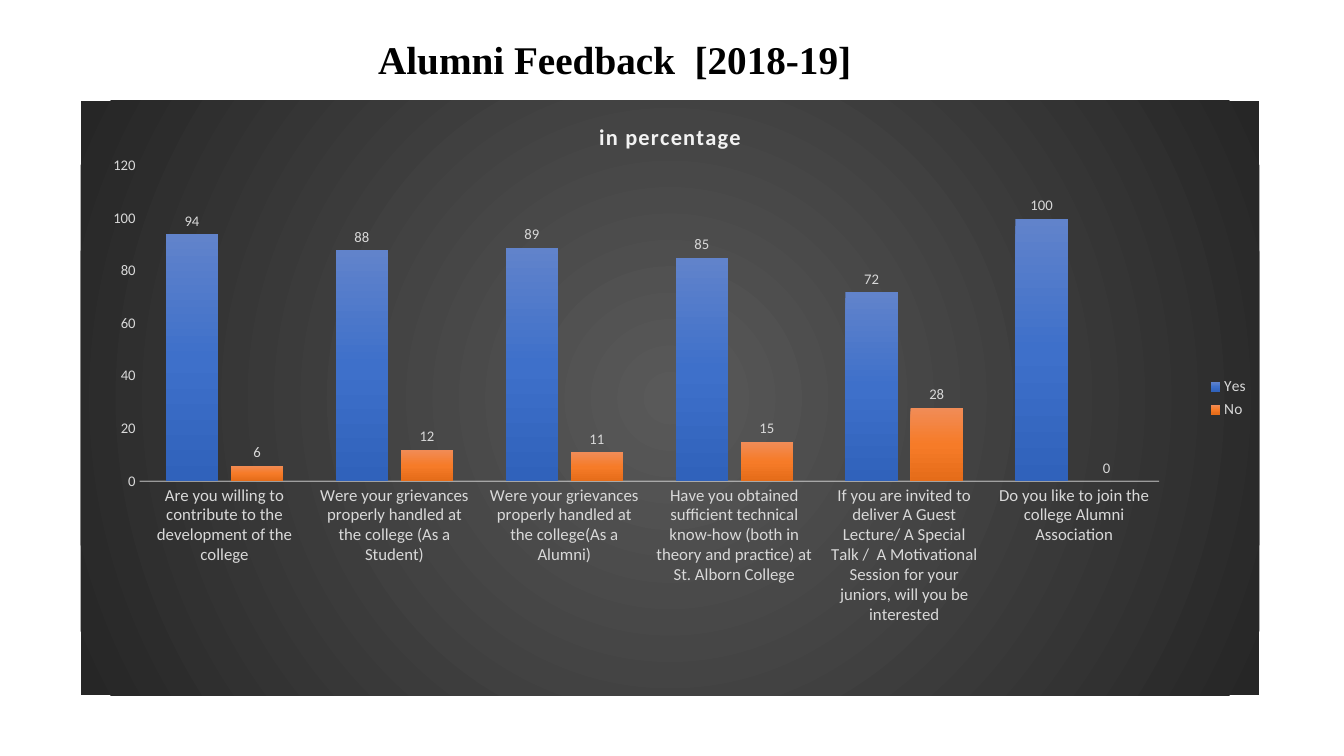
import pptx
import pptx.chart.data
import pptx.dml.color
import pptx.enum.chart
import pptx.enum.text
import pptx.oxml
import pptx.oxml.ns
import pptx.util
from pptx.util import Inches

BLACK = pptx.dml.color.RGBColor(0x00, 0x00, 0x00)
OFF_WHITE = pptx.dml.color.RGBColor(0xF2, 0xF2, 0xF2)
LIGHT_GREY = pptx.dml.color.RGBColor(0xD9, 0xD9, 0xD9)
MID_GREY = pptx.dml.color.RGBColor(0x59, 0x59, 0x59)
DARK_GREY = pptx.dml.color.RGBColor(0x26, 0x26, 0x26)
BLUES = [pptx.dml.color.RGBColor(0x61, 0x83, 0xCB),
         pptx.dml.color.RGBColor(0x3E, 0x70, 0xCA),
         pptx.dml.color.RGBColor(0x30, 0x62, 0xBB)]
ORANGES = [pptx.dml.color.RGBColor(0xF1, 0x8C, 0x57),
           pptx.dml.color.RGBColor(0xF6, 0x7B, 0x28),
           pptx.dml.color.RGBColor(0xE5, 0x6C, 0x19)]

QUESTIONS = [
    "Are you willing to contribute to the development of the college",
    "Were your grievances properly handled at the college (As a Student)",
    "Were your grievances properly handled at the college(As a Alumni)",
    "Have you obtained sufficient technical know-how (both in theory and "
    "practice) at St. Alborn College",
    "If you are invited to deliver A Guest Lecture/ A Special Talk /  "
    "A Motivational Session for your juniors, will you be interested",
    "Do you like to join the college Alumni Association",
]
ANSWERS = {
    "Yes": ([94, 88, 89, 85, 72, 100], BLUES),
    "No": ([6, 12, 11, 15, 28, 0], ORANGES),
}
LINEAR = '<a:lin ang="5400000" scaled="0"/>'
RADIAL = ('<a:path path="circle"><a:fillToRect l="50000" t="50000" '
          'r="50000" b="50000"/></a:path>')


def parse_chart_xml(tag, body):
    ns = pptx.oxml.ns.nsdecls("c", "a")
    return pptx.oxml.parse_xml(f"<c:{tag} {ns}>{body}</c:{tag}>")


def gradient_properties(colors, direction):
    """Return a c:spPr with evenly spaced gradient stops and no outline."""
    step = 100000 // (len(colors) - 1)
    stops = "".join(f'<a:gs pos="{i * step}"><a:srgbClr val="{c}"/></a:gs>'
                    for i, c in enumerate(colors))
    return parse_chart_xml(
        "spPr", f'<a:gradFill rotWithShape="1"><a:gsLst>{stops}</a:gsLst>'
                f"{direction}</a:gradFill><a:ln><a:noFill/></a:ln>")


def style_font(font, size, color, name="Calibri", bold=False):
    font.size = pptx.util.Pt(size)
    font.name = name
    font.bold = bold
    font.color.rgb = color


def add_title(s):
    title = s.shapes.title
    title.left, title.top = Inches(3.65), Inches(0.3)
    title.width, title.height = Inches(5.51), Inches(0.57)
    tf = title.text_frame
    tf.word_wrap = True
    tf.auto_size = pptx.enum.text.MSO_AUTO_SIZE.SHAPE_TO_FIT_TEXT
    tf.vertical_anchor = pptx.enum.text.MSO_ANCHOR.TOP
    p = tf.paragraphs[0]
    p.alignment = pptx.enum.text.PP_ALIGN.LEFT
    r = p.add_run()
    r.text = "Alumni Feedback  [2018-19]"
    style_font(r.font, 28, BLACK, "Times New Roman", True)


def style_chart_title(chart):
    chart.has_title = True
    chart.chart_title.include_in_layout = False
    r = chart.chart_title.text_frame.paragraphs[0].add_run()
    r.text = "in percentage"
    style_font(r.font, 16, OFF_WHITE, bold=True)
    r.font._element.set("spc", "100")


def style_axes(chart):
    for axis, size in ((chart.category_axis, 12), (chart.value_axis, 10.5)):
        axis.has_major_gridlines = False
        axis.major_tick_mark = pptx.enum.chart.XL_TICK_MARK.NONE
        axis.minor_tick_mark = pptx.enum.chart.XL_TICK_MARK.NONE
        style_font(axis.tick_labels.font, size, LIGHT_GREY)
    chart.value_axis.minimum_scale = 0
    chart.value_axis.maximum_scale = 120
    chart.value_axis.major_unit = 20
    chart.value_axis.format.line.fill.background()
    line = chart.category_axis.format.line
    line.width = pptx.util.Pt(1)
    line.color.rgb = OFF_WHITE
    color = line._ln.find(".//" + pptx.oxml.ns.qn("a:srgbClr"))
    color.append(pptx.oxml.parse_xml(
        f'<a:alpha {pptx.oxml.ns.nsdecls("a")} val="54000"/>'))


def style_bars(chart):
    plot = chart.plots[0]
    plot.vary_by_categories = False
    plot.gap_width = 100
    plot.overlap = -24
    for series, (_, colors) in zip(plot.series, ANSWERS.values()):
        ser = series._element
        ser.replace(ser.get_or_add_spPr(), gradient_properties(colors, LINEAR))
        labels = series.data_labels
        labels.show_value = True
        labels.position = pptx.enum.chart.XL_LABEL_POSITION.OUTSIDE_END
        style_font(labels.font, 10.5, LIGHT_GREY)


def place_plot(chart, x, y, w, h):
    """Fix the inner plot area, in fractions of the chart's size."""
    area = chart._chartSpace.chart.plotArea
    for layout in area.findall(pptx.oxml.ns.qn("c:layout")):
        area.remove(layout)
    settings = [("layoutTarget", "inner"), ("xMode", "edge"),
                ("yMode", "edge"), ("x", x), ("y", y), ("w", w), ("h", h)]
    body = "".join(f'<c:{tag} val="{val}"/>' for tag, val in settings)
    area.insert(0, parse_chart_xml(
        "layout", f"<c:manualLayout>{body}</c:manualLayout>"))


def add_feedback_chart(s):
    data = pptx.chart.data.CategoryChartData()
    data.categories = QUESTIONS
    for name, (values, _) in ANSWERS.items():
        data.add_series(name, values)
    chart = s.shapes.add_chart(
        pptx.enum.chart.XL_CHART_TYPE.COLUMN_CLUSTERED, Inches(0.8), Inches(1),
        Inches(11.69), Inches(5.9), data).chart
    style_font(chart.font, 10, BLACK)
    chart._chartSpace.chart.addnext(
        gradient_properties([MID_GREY, DARK_GREY], RADIAL))
    style_chart_title(chart)
    style_axes(chart)
    style_bars(chart)
    place_plot(chart, 0.05, 0.11, 0.865, 0.53)
    chart.has_legend = True
    chart.legend.position = pptx.enum.chart.XL_LEGEND_POSITION.RIGHT
    chart.legend.include_in_layout = False
    style_font(chart.legend.font, 11, LIGHT_GREY)


def main():
    prs = pptx.Presentation()
    prs.slide_width, prs.slide_height = Inches(13.33), Inches(7.5)
    s = prs.slides.add_slide(prs.slide_layouts.get_by_name("Title Only"))
    add_feedback_chart(s)
    add_title(s)
    prs.save("out.pptx")


if __name__ == "__main__":
    main()
